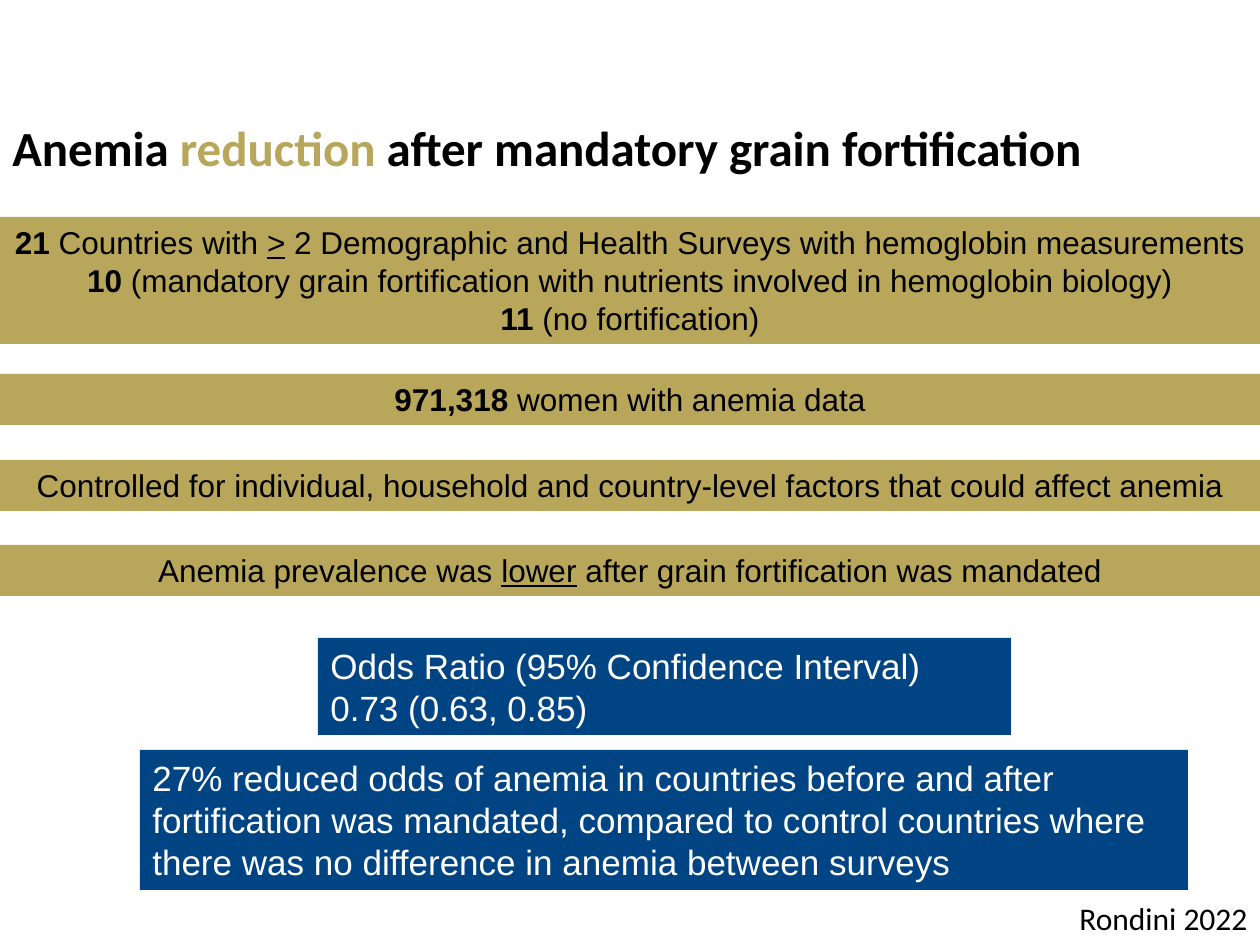
from pptx import Presentation
from pptx.dml.color import RGBColor
from pptx.enum.text import MSO_ANCHOR, MSO_AUTO_SIZE, PP_ALIGN
from pptx.util import Emu, Pt

LEFT, CENTER, RIGHT = PP_ALIGN.LEFT, PP_ALIGN.CENTER, PP_ALIGN.RIGHT
MIDDLE = MSO_ANCHOR.MIDDLE
GROW = MSO_AUTO_SIZE.SHAPE_TO_FIT_TEXT
BLACK = RGBColor(0x00, 0x00, 0x00)
WHITE = RGBColor(0xFF, 0xFF, 0xFF)
GOLD = RGBColor(0xB8, 0xA7, 0x5A)
BLUE = RGBColor(0x00, 0x44, 0x84)
PX_PER_INCH = 126
WIDTH, HEIGHT = 1260, 945


def px(n):
    return Emu(round(n * 914400 / PX_PER_INCH))


class FindingsSlide:
    body_font = "Arial"
    heading_font = "Calibri"

    def __init__(self, prs):
        self.slide = prs.slides.add_slide(prs.slide_layouts[6])

    def text(self, box, paragraphs, size, color, font, align):
        s = self.slide.shapes.add_textbox(*map(px, box))
        tf = s.text_frame
        tf.word_wrap = True
        tf.auto_size = GROW
        for i, runs in enumerate(paragraphs):
            p = tf.add_paragraph() if i else tf.paragraphs[0]
            p.alignment = align
            for words, style in runs:
                r = p.add_run()
                r.text = words
                r.font.name = font
                r.font.size = Pt(size)
                r.font.bold = style == "bold"
                r.font.underline = style == "underline"
                r.font.color.rgb = color
        return s

    def title(self, box, parts):
        s = self.text(box, [[(words, "bold") for words, _ in parts]],
                      28, BLACK, self.heading_font, LEFT)
        tf = s.text_frame
        tf.auto_size = MSO_AUTO_SIZE.NONE
        tf.vertical_anchor = MIDDLE
        p = tf.paragraphs[0]
        p.line_spacing = 0.9
        for r, (_, color) in zip(p.runs, parts):
            r.font.color.rgb = color

    def panel(self, box, paragraphs, size, color, fill, align):
        s = self.text(box, paragraphs, size, color, self.body_font, align)
        s.fill.solid()
        s.fill.fore_color.rgb = fill

    def band(self, top, height, paragraphs):
        self.panel((0, top, WIDTH, height), paragraphs, 18, BLACK, GOLD, CENTER)

    def result(self, box, lines):
        self.panel(box, [[(line, "")] for line in lines], 20, WHITE, BLUE, LEFT)

    def citation(self, box, words):
        self.text(box, [[(words, "")]], 18, BLACK, self.heading_font, RIGHT)


def main():
    prs = Presentation()
    prs.slide_width, prs.slide_height = px(WIDTH), px(HEIGHT)
    page = FindingsSlide(prs)

    page.title((0, 59, 1174, 183), [
        ("Anemia ", BLACK),
        ("reduction", GOLD),
        (" after mandatory grain fortification", BLACK),
    ])

    bands = [
        (217, 127, [
            [("21", "bold"), (" Countries with ", ""), (">", "underline"),
             (" 2 Demographic and Health Surveys with hemoglobin measurements", "")],
            [("10", "bold"),
             (" (mandatory grain fortification with nutrients involved in hemoglobin biology)", "")],
            [("11", "bold"), (" (no fortification)", "")],
        ]),
        (374, 51, [[("971,318", "bold"), (" women with anemia data", "")]]),
        (460, 51, [[("Controlled for individual, household and country-level factors "
                     "that could affect anemia", "")]]),
        (545, 51, [[("Anemia prevalence was ", ""), ("lower", "underline"),
                    (" after grain fortification was mandated", "")]]),
    ]
    for top, height, paragraphs in bands:
        page.band(top, height, paragraphs)

    page.result((318, 638, 693, 97),
                ["Odds Ratio (95% Confidence Interval)", "0.73 (0.63, 0.85)"])
    page.result((140, 750, 1048, 140),
                ["27% reduced odds of anemia in countries before and after "
                 "fortification was mandated, compared to control countries where "
                 "there was no difference in anemia between surveys"])
    page.citation((0, 893, WIDTH, 51), "Rondini 2022")

    prs.save("out.pptx")


if __name__ == "__main__":
    main()
